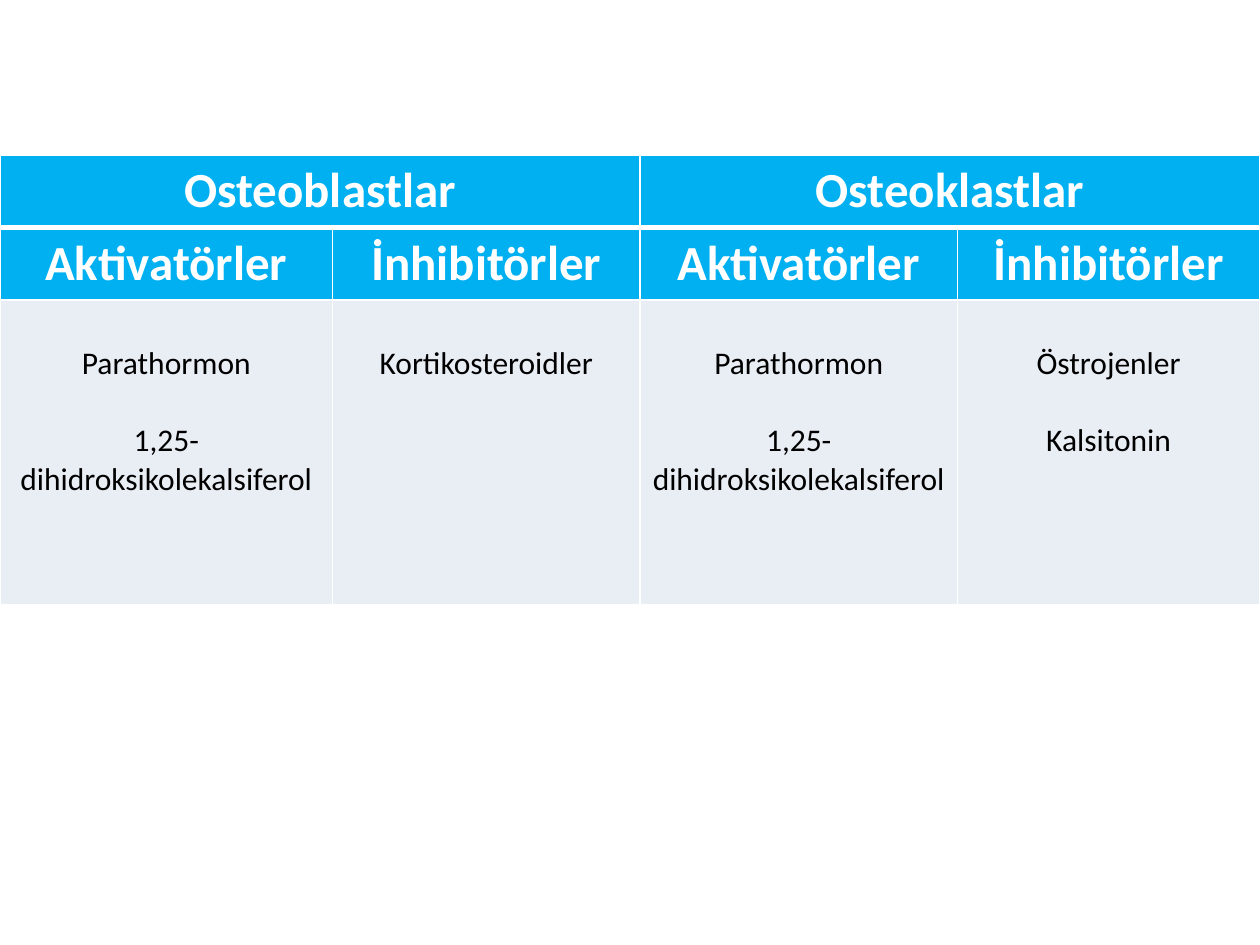
from dataclasses import dataclass

from lxml import etree
from pptx import Presentation
from pptx import util as u
from pptx.dml.color import RGBColor
from pptx.enum import text
from pptx.oxml import ns


@dataclass(frozen=True)
class Theme:
    """Colours, font and type sizes of the slide."""
    font: str = "Calibri"
    header_fill: str = "00B0F0"
    header_text: str = "FFFFFF"
    body_fill: str = "E9EDF4"
    body_text: str = "000000"
    border: str = "FFFFFF"
    header_size: int = 28
    body_size: int = 18
    line_gap: int = 22


THEME = Theme()
COLUMN_WIDTHS = (2.64, 2.44, 2.52, 2.4)
ROW_HEIGHTS = (0.57, 0.57, 2.42)
CELL_TYPES = ("Osteoblastlar", "Osteoklastlar")
EFFECTS = ("Aktivatörler", "İnhibitörler")
ACTIVATORS = ("Parathormon", "1,25-dihidroksikolekalsiferol")
REGULATORS = (ACTIVATORS, ("Kortikosteroidler",), ACTIVATORS, ("Östrojenler", "Kalsitonin"))


def set_borders(cell, **widths):
    """Draw the four cell borders, in points, ahead of the cell fill."""
    properties = cell._tc.get_or_add_tcPr()
    for position, side in enumerate("LRTB"):
        line = etree.Element(ns.qn(f"a:ln{side}"), w=str(u.Pt(widths.get(side, 1))))
        fill = etree.SubElement(line, ns.qn("a:solidFill"))
        etree.SubElement(fill, ns.qn("a:srgbClr"), val=THEME.border)
        properties.insert(position, line)


def write_cell(cell, lines, size, color, fill, bold=False):
    """Fill a cell and write its centred lines."""
    cell.fill.solid()
    cell.fill.fore_color.rgb = RGBColor.from_string(fill)
    frame = cell.text_frame
    for index, line in enumerate(lines):
        paragraph = frame.add_paragraph() if index else frame.paragraphs[0]
        paragraph.alignment = text.PP_ALIGN.CENTER
        if index:
            paragraph.space_before = u.Pt(THEME.line_gap)
        run = paragraph.add_run()
        run.text = line
        run.font.name = THEME.font
        run.font.size = u.Pt(size)
        run.font.bold = bold
        run.font.color.rgb = RGBColor.from_string(color)


def write_header(cell, label):
    """Write one bold header cell."""
    write_cell(cell, [label], THEME.header_size, THEME.header_text, THEME.header_fill, bold=True)


def write_body(cell, lines):
    """Write one body cell, starting a line below its top."""
    write_cell(cell, lines, THEME.body_size, THEME.body_text, THEME.body_fill)
    cell.margin_top = u.Inches(0.05) + u.Pt(THEME.line_gap)


def add_regulator_table(slide):
    """Add the table of bone cell activators and inhibitors."""
    table = slide.shapes.add_table(
        len(ROW_HEIGHTS), len(COLUMN_WIDTHS), u.Inches(0), u.Inches(1.23),
        u.Inches(sum(COLUMN_WIDTHS)), u.Inches(sum(ROW_HEIGHTS))).table
    table.horz_banding = False
    for column, width in zip(table.columns, COLUMN_WIDTHS):
        column.width = u.Inches(width)
    for row, height in zip(table.rows, ROW_HEIGHTS):
        row.height = u.Inches(height)
    for index, cell_type in enumerate(CELL_TYPES):
        first = index * len(EFFECTS)
        table.cell(0, first).merge(table.cell(0, first + len(EFFECTS) - 1))
        write_header(table.cell(0, first), cell_type)
    for column, lines in enumerate(REGULATORS):
        write_header(table.cell(1, column), EFFECTS[column % len(EFFECTS)])
        write_body(table.cell(2, column), lines)
        set_borders(table.cell(0, column), B=3)
        set_borders(table.cell(1, column), T=3)
        set_borders(table.cell(2, column))


def main():
    """Build and save the presentation."""
    presentation = Presentation()
    presentation.slide_width = u.Inches(10)
    presentation.slide_height = u.Inches(7.5)
    slide = presentation.slides.add_slide(presentation.slide_layouts[6])
    add_regulator_table(slide)
    presentation.save("out.pptx")


if __name__ == "__main__":
    main()
